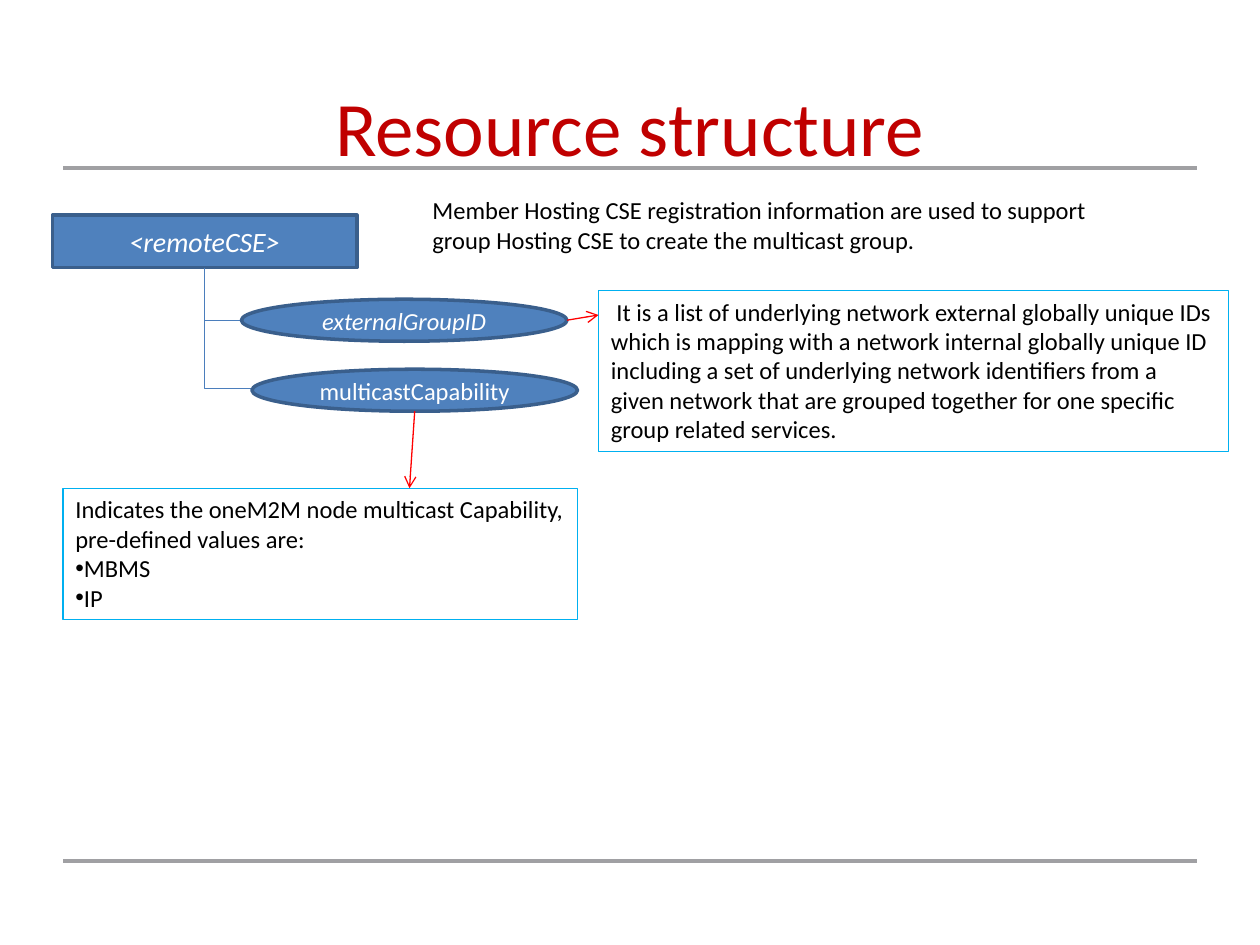
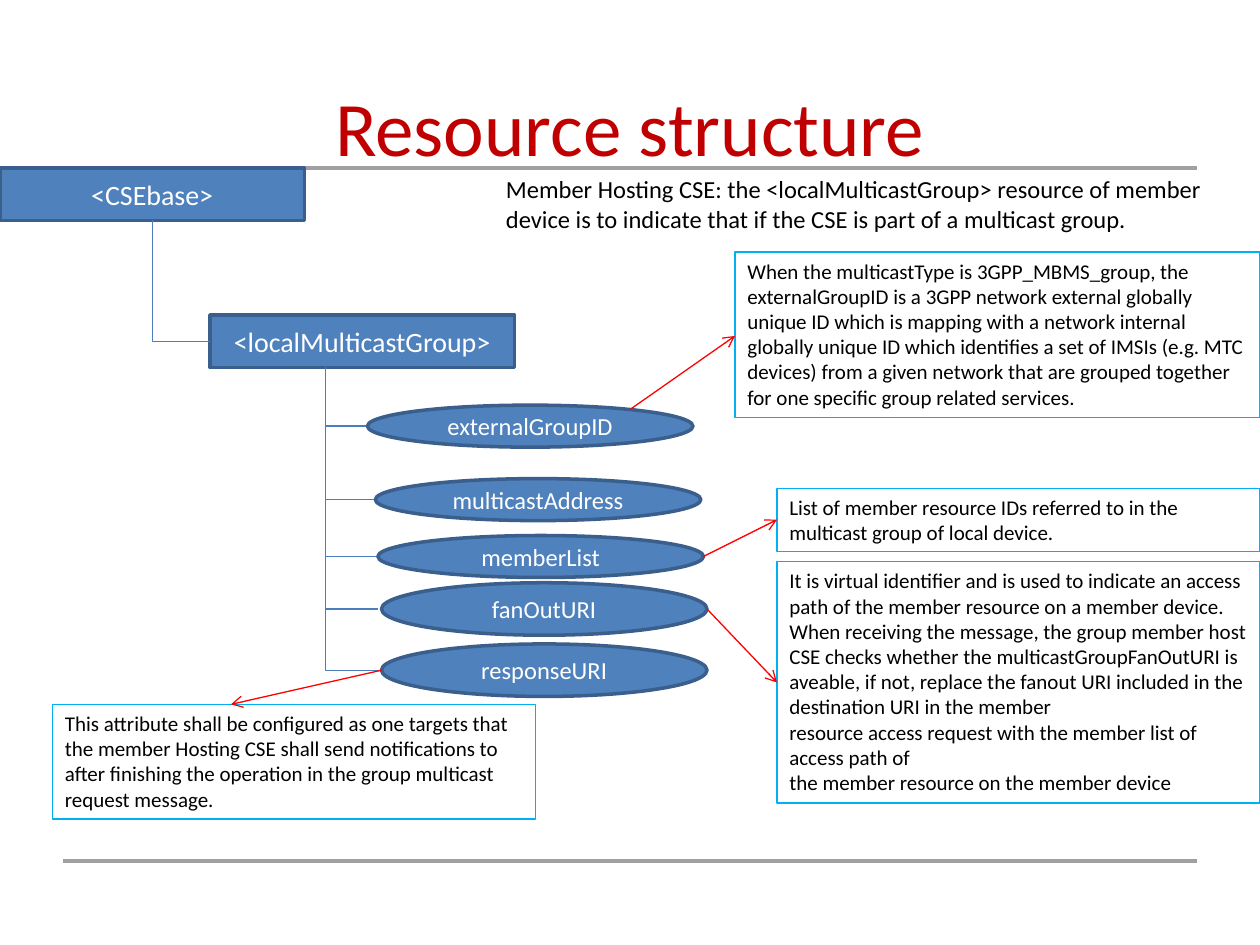
from lxml.etree import SubElement
from pptx import Presentation
from pptx.dml.color import RGBColor
from pptx.enum.shapes import MSO_CONNECTOR as Connector, MSO_SHAPE as Shape
from pptx.enum.text import MSO_ANCHOR as Anchor, MSO_AUTO_SIZE as AutoSize, PP_ALIGN as Align
from pptx.oxml.ns import qn
from pptx.util import Pt

RULE_GRAY = RGBColor(0xA0, 0xA0, 0xA3)
TITLE_RED = RGBColor(0xC0, 0x00, 0x00)
NODE_BLUE = RGBColor(0x4F, 0x81, 0xBD)
NODE_BORDER = RGBColor(0x3A, 0x5F, 0x8C)
BRANCH_BLUE = RGBColor(0x4B, 0x7E, 0xBC)
NOTE_BORDER = RGBColor(0x00, 0xB0, 0xF0)
ARROW_RED = RGBColor(0xFF, 0x00, 0x00)
BLACK = RGBColor(0x00, 0x00, 0x00)
WHITE = RGBColor(0xFF, 0xFF, 0xFF)

FONT = "Calibri"
RESOURCE_SIZE = (174, 30)
ATTRIBUTE_WIDTH = 186


class ResourceDeck:
    """Holds the style and the current slide; all lengths are in points."""

    def __init__(self):
        self.presentation = Presentation()
        self.presentation.slide_width = Pt(720)
        self.presentation.slide_height = Pt(540)
        self.slide = None

    def start_slide(self, title):
        blank = self.presentation.slide_layouts[6]
        self.slide = self.presentation.slides.add_slide(blank)
        for y in (492, 96):
            self.line((36, y), (684, y), RULE_GRAY, 1.75)
        self.text((36, 42, 648, 90), title, 44, TITLE_RED, Align.CENTER)

    # Text
    def add_words(self, shape, paragraphs, size, color, align=Align.LEFT,
                  italic=False, bullets=False, indent=0):
        """Fill a shape; with bullets, every paragraph after the first has one."""
        frame = shape.text_frame
        frame.word_wrap = True
        for number, words in enumerate(paragraphs):
            paragraph = frame.paragraphs[0] if number == 0 else frame.add_paragraph()
            paragraph.alignment = align
            properties = paragraph._p.get_or_add_pPr()
            if indent and number == 0:
                properties.set("indent", str(Pt(indent)))
            if bullets and number > 0:
                SubElement(properties, qn("a:buFont")).set("typeface", "Arial")
                SubElement(properties, qn("a:buChar")).set("char", "•")
            run = paragraph.add_run()
            run.text = words
            run.font.name = FONT
            run.font.size = Pt(size)
            run.font.color.rgb = color
            run.font.italic = italic

    def text(self, box, words, size=14, color=BLACK, align=Align.LEFT):
        shape = self.slide.shapes.add_textbox(*map(Pt, box))
        self.add_words(shape, [words], size, color, align)

    # Boxes and ellipses
    def outlined(self, kind, box, border, width):
        shape = self.slide.shapes.add_shape(kind, *map(Pt, box))
        shape.shadow.inherit = False
        shape.line.color.rgb = border
        shape.line.width = Pt(width)
        return shape

    def node(self, kind, box, name, size, italic):
        shape = self.outlined(kind, box, NODE_BORDER, 2)
        shape.fill.solid()
        shape.fill.fore_color.rgb = NODE_BLUE
        shape.text_frame.vertical_anchor = Anchor.MIDDLE
        self.add_words(shape, [name], size, WHITE, Align.CENTER, italic)

    def resource(self, left, top, name, italic=False):
        self.node(Shape.RECTANGLE, (left, top, *RESOURCE_SIZE), name, 16, italic)

    def attribute(self, left, top, name, height=24, italic=False):
        box = (left, top, ATTRIBUTE_WIDTH, height)
        self.node(Shape.OVAL, box, name, 14, italic)

    def note(self, box, *paragraphs, size=12, bullets=False, indent=0):
        shape = self.outlined(Shape.RECTANGLE, box, NOTE_BORDER, 0.75)
        shape.fill.background()
        shape.text_frame.vertical_anchor = Anchor.TOP
        shape.text_frame.auto_size = AutoSize.SHAPE_TO_FIT_TEXT
        self.add_words(shape, paragraphs, size, BLACK, bullets=bullets, indent=indent)

    # Lines
    def line(self, start, end, color, width=0.75, kind=Connector.STRAIGHT):
        connector = self.slide.shapes.add_connector(kind, *map(Pt, (*start, *end)))
        connector.line.color.rgb = color
        connector.line.width = Pt(width)
        SubElement(connector._element.spPr, qn("a:effectLst"))
        return connector

    def arrow(self, start, end):
        connector = self.line(start, end, ARROW_RED)
        outline = connector._element.spPr.find(qn("a:ln"))
        SubElement(outline, qn("a:tailEnd")).set("type", "arrow")

    def branch(self, start, end):
        """Run down from start, then right to end, with a turned single elbow."""
        (x1, y1), (x2, y2) = start, end
        middle_x, middle_y = (x1 + x2) / 2, (y1 + y2) / 2
        half_drop, half_reach = (y2 - y1) / 2, (x2 - x1) / 2
        connector = self.line((middle_x - half_drop, middle_y - half_reach),
                              (middle_x + half_drop, middle_y + half_reach),
                              BRANCH_BLUE, kind=Connector.ELBOW)
        properties = connector._element.spPr
        properties.find(qn("a:prstGeom")).set("prst", "bentConnector2")
        frame = properties.find(qn("a:xfrm"))
        frame.set("rot", str(270 * 60000))
        frame.set("flipH", "1")


def remote_cse_slide(deck):
    deck.start_slide("Resource structure")
    deck.text((240, 108, 420, 58),
              "Member Hosting CSE registration information are used to support "
              "group Hosting CSE to create the multicast group.")

    # Resource tree
    deck.resource(30, 123, "<remoteCSE>", italic=True)
    for y in (222, 183):
        deck.branch((117, 153), (150, y))
    deck.attribute(144, 211, "multicastCapability")
    deck.attribute(138, 171, "externalGroupID", italic=True)

    # Explanations
    deck.note((36, 279, 294, 75),
              "Indicates the oneM2M node multicast Capability, pre-defined values are:",
              "MBMS", "IP", size=14, bullets=True)
    deck.note((342, 166, 360, 92),
              "It is a list of underlying network external globally unique IDs "
              "which is mapping with a network internal globally unique ID "
              "including a set of underlying network identifiers from a given "
              "network that are grouped together for one specific group related "
              "services.", size=14, indent=3.2)
    deck.arrow((324, 183), (342, 180))
    deck.arrow((237, 235), (234, 279))


def local_multicast_group_slide(deck):
    deck.start_slide("Resource structure")
    deck.text((282, 96, 420, 41),
              "Member Hosting CSE: the <localMulticastGroup> resource of member "
              "device is to indicate that if the CSE is part of a multicast group.")

    # Resource tree
    deck.resource(0, 96, "<CSEbase>")
    deck.resource(120, 180, "<localMulticastGroup>")
    deck.branch((87, 126), (120, 195))

    # Attributes: name, left, top, height, top of the branch
    attributes = [
        ("externalGroupID", 210, 231.5, 24, 210),
        ("multicastAddress", 214.5, 273.5, 24, 246),
        ("memberList", 216, 306, 24, 253),
        ("fanOutURI", 218, 333, 30, 252),
        ("responseURI", 218, 368, 30, 237),
    ]
    for name, left, top, height, branch_top in attributes:
        end_x = 216 if name == "fanOutURI" else left
        deck.branch((186, branch_top), (end_x, top + height / 2))
        deck.attribute(left, top, name, height)

    # Explanations
    deck.note((420, 144, 300, 94.5),
              "When the multicastType is 3GPP_MBMS_group, the externalGroupID is "
              "a 3GPP network external globally unique ID which is mapping with a "
              "network internal globally unique ID which identifies a set of "
              "IMSIs (e.g. MTC devices) from a given network that are grouped "
              "together for one specific group related services.")
    deck.note((444, 279, 276, 36),
              "List of member resource IDs referred to in the multicast group of "
              "local device.")
    deck.note((444, 321, 276, 138),
              "It is virtual identifier and is used to indicate an access path of "
              "the member resource on a member device. When receiving the message, "
              "the group member host CSE checks whether the "
              "multicastGroupFanOutURI is aveable, if not, replace the fanout URI "
              "included in the destination URI in the member",
              "resource access request with the member list of access path of",
              "the member resource on the member device")
    deck.note((30, 402.5, 276, 65.5),
              "This attribute shall be configured as one targets that the member "
              "Hosting CSE shall send notifications to after finishing the "
              "operation in the group multicast request message.")
    deck.arrow((360, 234), (420, 192))
    deck.arrow((402, 318), (444, 297))
    deck.arrow((404, 348), (444, 390))
    deck.arrow((218, 383), (132, 402.5))


def main():
    deck = ResourceDeck()
    remote_cse_slide(deck)
    local_multicast_group_slide(deck)
    deck.presentation.save("out.pptx")


if __name__ == "__main__":
    main()
